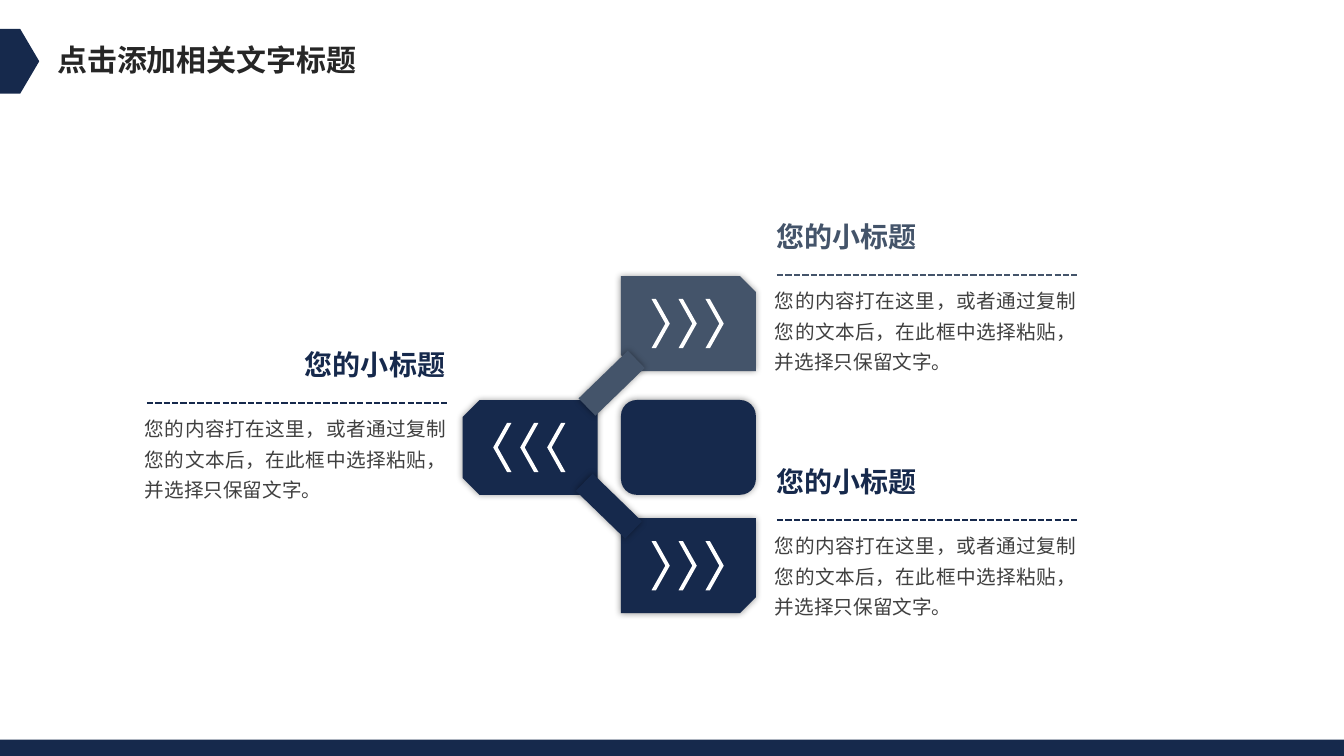
from lxml.etree import SubElement
from pptx import Presentation
from pptx.dml.color import RGBColor
from pptx.enum.dml import MSO_LINE
from pptx.enum.shapes import MSO_CONNECTOR, MSO_SHAPE
from pptx.enum.text import MSO_ANCHOR, MSO_AUTO_SIZE, PP_ALIGN
from pptx.oxml.ns import qn
from pptx.util import Cm, Pt

# Content
NAVY, SLATE, WHITE = "16294C", "44546A", "FFFFFF"
FONT = "Noto Sans CJK SC"
TITLE = "点击添加相关文字标题"
HEAD = "您的小标题"
NOTE = "您的内容打在这里，或者通过复制您的文本后，在此框中选择粘贴，并选择只保留文字。"

# Sizes in cm
WIDE, HIGH = 33.87, 19.05
TILE_W, TILE_H = 3.4, 2.39
LEFT, RIGHT = 11.66, 15.65
TOP, MID, LOW = 6.96, 10.08, 13.06
NOTE_W, NOTE_H, HEAD_W, HEAD_H = 8.1, 2.59, 4.06, 1.12
CHEV_W, CHEV_H, CHEV_GAP = 0.46, 1.24, 0.68

# Tiles that carry arrows: kind, x, y, colour, adjustments, turn
TILES = [
    (MSO_SHAPE.SNIP_2_DIAG_RECTANGLE, RIGHT, TOP, SLATE, (0, 0.167), 0),
    (MSO_SHAPE.SNIP_2_SAME_RECTANGLE, LEFT, MID, NAVY, (0.178, 0), 270),
    (MSO_SHAPE.SNIP_2_DIAG_RECTANGLE, RIGHT, LOW, NAVY, (0.167, 0), 0),
]
# Struts: x, y, colour, turn
STRUTS = [(14.55, 9.35, SLATE, 315.9), (14.48, 12.45, NAVY, 44.1)]
# Notes: x, y, colour, heading on the right
NOTES = [
    (19.28, 6.98, SLATE, False),
    (19.28, 13.16, NAVY, False),
    (3.4, 10.21, NAVY, True),
]


def color(hexa):
    return RGBColor.from_string(hexa)


def put(kind, x, y, w, h, fill, adj=(), turn=0, glow=False):
    part = slide.shapes.add_shape(kind, Cm(x), Cm(y), Cm(w), Cm(h))
    part.shadow.inherit = False
    part.fill.solid()
    part.fill.fore_color.rgb = color(fill)
    part.line.fill.background()
    part.rotation = turn
    for i, val in enumerate(adj):
        part.adjustments[i] = val
    if glow:
        effects = part._element.spPr.find(qn("a:effectLst"))
        shade = SubElement(effects, qn("a:outerShdw"), blurRad=str(Pt(5)), dist="0",
                           algn="ctr", rotWithShape="0")
        black = SubElement(shade, qn("a:srgbClr"), val="000000")
        SubElement(black, qn("a:alpha"), val="40000")


def write(box, text, size, ink, bold=False, wrap=False,
          align=PP_ALIGN.LEFT, space=1.0, anchor=MSO_ANCHOR.TOP):
    frame = box.text_frame
    frame.text = text
    para = frame.paragraphs[0]
    look = {
        frame: {"word_wrap": wrap, "auto_size": MSO_AUTO_SIZE.SHAPE_TO_FIT_TEXT,
                "vertical_anchor": anchor},
        para: {"alignment": align, "line_spacing": space},
    }
    for item, vals in look.items():
        for name, val in vals.items():
            setattr(item, name, val)
    run = para.runs[0]
    for name, val in {"size": Pt(size), "bold": bold, "name": FONT}.items():
        setattr(run.font, name, val)
    run.font.color.rgb = color(ink)
    SubElement(run._r.get_or_add_rPr(), qn("a:ea"), typeface=FONT)


def add_box(x, y, w, h):
    return slide.shapes.add_textbox(Cm(x), Cm(y), Cm(w), Cm(h))


deck = Presentation()
deck.slide_width, deck.slide_height = Cm(WIDE), Cm(HIGH)
slide = deck.slides.add_slide(deck.slide_layouts[5])

# Title, side marker and bottom bar
title = slide.shapes.title
spot = {"left": 1.19, "top": 0.91, "width": 8.13, "height": 1.17}
for name, val in spot.items():
    setattr(title, name, Cm(val))
write(title, TITLE, 21.4, "262626", bold=True, anchor=MSO_ANCHOR.MIDDLE)
put(MSO_SHAPE.PENTAGON, 0, 0.73, 0.99, 1.63, NAVY, (0.484,))
put(MSO_SHAPE.RECTANGLE, 0, 18.64, WIDE, HIGH - 18.64, NAVY)

# Tiles with three chevrons each
for kind, x, y, fill, adj, turn in TILES:
    w, h = (TILE_H, TILE_W) if turn else (TILE_W, TILE_H)
    put(kind, x + (TILE_W - w) / 2, y + (TILE_H - h) / 2, w, h, fill, adj, turn, True)
    for i in range(3):
        put(MSO_SHAPE.CHEVRON, x + 0.77 + i * CHEV_GAP, y + (TILE_H - CHEV_H) / 2,
            CHEV_W, CHEV_H, WHITE, (0.758,), 180 if x == LEFT else 0)

# Centre tile and struts
put(MSO_SHAPE.ROUNDED_RECTANGLE, RIGHT, MID, TILE_W, TILE_H, NAVY, glow=True)
for x, y, fill, turn in STRUTS:
    put(MSO_SHAPE.RECTANGLE, x, y, 1.73, 0.61, fill, turn=turn, glow=True)

# Notes with heading and dashed rule
for x, y, ink, right in NOTES:
    write(add_box(x, y, NOTE_W, NOTE_H), NOTE, 14, "404040", wrap=True,
          align=PP_ALIGN.JUSTIFY, space=1.3)
    edge = x + NOTE_W - HEAD_W - 0.03 if right else x + 0.03
    write(add_box(edge, y - 1.57, HEAD_W, HEAD_H), HEAD, 20, ink, bold=True,
          align=PP_ALIGN.RIGHT if right else PP_ALIGN.LEFT)
    rule = slide.shapes.add_connector(MSO_CONNECTOR.STRAIGHT, Cm(x + 0.3), Cm(y - 0.05),
                                      Cm(x + 7.87), Cm(y - 0.05))
    rule.line.color.rgb = color(ink)
    rule.line.width = Pt(1.5)
    rule.line.dash_style = MSO_LINE.SQUARE_DOT
    SubElement(rule._element.spPr, qn("a:effectLst"))

deck.save("out.pptx")
